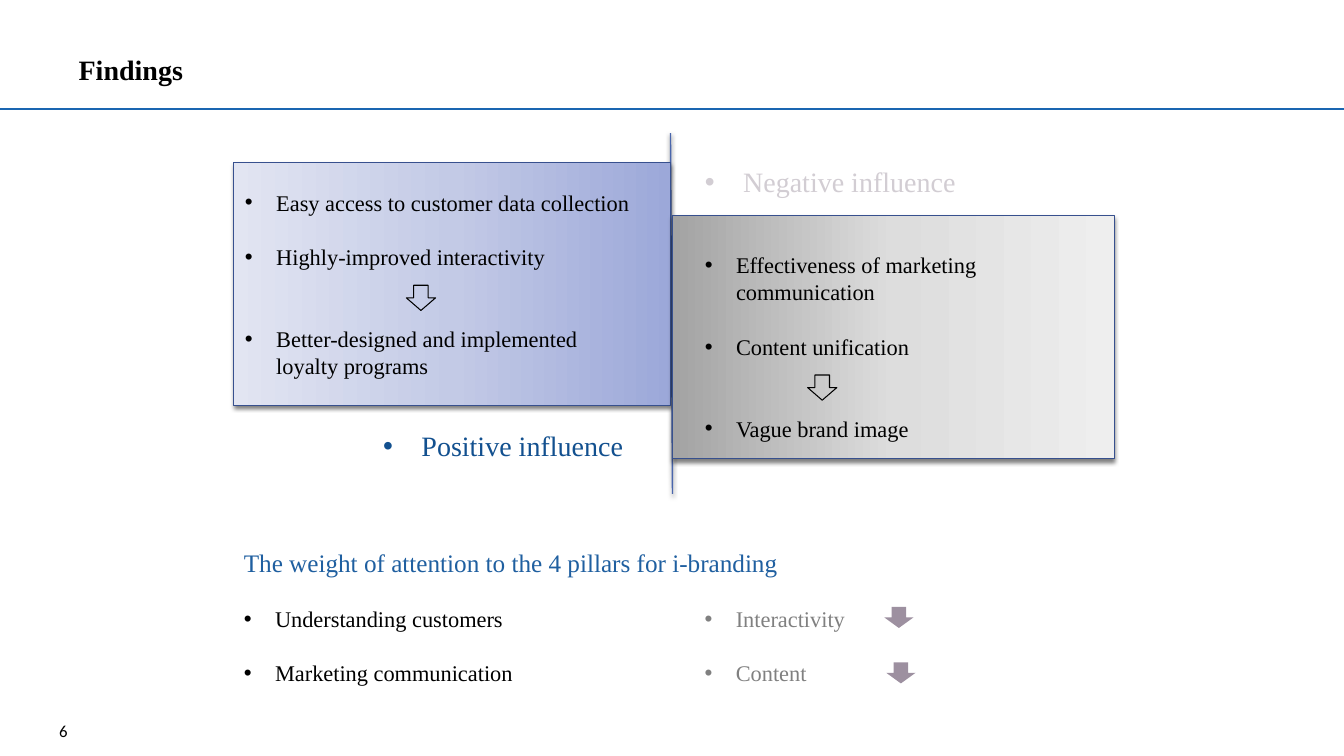
from lxml.etree import SubElement
from pptx import Presentation
from pptx.dml.color import RGBColor
from pptx.enum.shapes import MSO_CONNECTOR as Connector, MSO_SHAPE as Preset
from pptx.enum.text import MSO_ANCHOR as Anchor, MSO_AUTO_SIZE as AutoSize, PP_ALIGN as Align
from pptx.oxml.ns import qn
from pptx.util import Emu, Pt

PX = 9144
LINE_RATIO = 1.215
COLORS = {
    "black": "000000",
    "rule": "1A66B1",
    "divider": "4A66AC",
    "panel_edge": "37508E",
    "positive": "12508F",
    "negative": "D2CDD3",
    "heading": "1F5FA0",
    "muted": "808080",
    "marker": "9D90A0",
}
POSITIVE_STOPS = ("9CA8D9", "C3CAE6", "E2E5F2")
NEGATIVE_STOPS = ("A3A3A3", "DDDDDD", "EEEEEE")


def px(value):
    return Emu(value * PX)


def rgb(name):
    return RGBColor.from_string(COLORS[name])


class SlideBuilder:
    def __init__(self, slide, font="Times New Roman"):
        self.slide = slide
        self.shapes = slide.shapes
        self.font = font

    def place(self, shape, box):
        for name, value in zip(("left", "top", "width", "height"), box):
            setattr(shape, name, px(value))

    def style_frame(self, frame, anchor=Anchor.TOP):
        formats = {"word_wrap": True, "auto_size": AutoSize.NONE, "vertical_anchor": anchor}
        for name, value in formats.items():
            setattr(frame, name, value)

    def style_paragraph(self, paragraph, text, size, color, bold=False, font=None, **layout):
        paragraph.text = text
        for name, value in layout.items():
            setattr(paragraph, name, value)
        formats = {"name": font or self.font, "size": Pt(size), "bold": bold}
        for name, value in formats.items():
            setattr(paragraph.font, name, value)
        paragraph.font.color.rgb = rgb(color)

    def add_bullet(self, paragraph, indent):
        properties = paragraph._p.get_or_add_pPr()
        properties.set("marL", str(px(indent)))
        properties.set("indent", str(-px(indent)))
        SubElement(properties, qn("a:buFont"), typeface="Arial")
        SubElement(properties, qn("a:buChar"), char="•")

    def title(self, box, text):
        shape = self.shapes.title
        self.place(shape, box)
        self.style_frame(shape.text_frame, Anchor.MIDDLE)
        self.style_paragraph(shape.text_frame.paragraphs[0], text, 20, "black", True,
                             alignment=Align.LEFT, line_spacing=1.5)

    def label(self, box, text, size, color, **style):
        shape = self.shapes.add_textbox(*map(px, box))
        self.style_frame(shape.text_frame, Anchor.MIDDLE)
        self.style_paragraph(shape.text_frame.paragraphs[0], text, size, color, **style)

    def bullets(self, box, items, size=16, color="black", indent=31, holder=None):
        if holder is None:
            shape = self.shapes.add_textbox(*map(px, box))
        else:
            shape = self.slide.placeholders[holder]
            shape.element.getparent().append(shape.element)
            self.place(shape, box)
        frame = shape.text_frame
        self.style_frame(frame)
        line_height = Pt(size * LINE_RATIO)
        for index, (text, gap) in enumerate(items):
            paragraph = frame.add_paragraph() if index else frame.paragraphs[0]
            self.style_paragraph(paragraph, text, size, color, alignment=Align.LEFT,
                                 line_spacing=line_height, space_before=gap * line_height)
            self.add_bullet(paragraph, indent)

    def add_shadow(self, effects):
        shadow = SubElement(effects, qn("a:outerShdw"), blurRad=str(Pt(3)), dist=str(Pt(2)),
                            dir="5400000", algn="ctr", rotWithShape="0")
        color = SubElement(shadow, qn("a:srgbClr"), val=COLORS["black"])
        SubElement(color, qn("a:alpha"), val="50000")

    def line(self, start, end, color, shadow=False):
        connector = self.shapes.add_connector(Connector.STRAIGHT, *map(px, start + end))
        connector.line.color.rgb = rgb(color)
        connector.line.width = Pt(1)
        effects = SubElement(connector.element.spPr, qn("a:effectLst"))
        if shadow:
            self.add_shadow(effects)

    def shape(self, preset, box, fill=None, edge=None):
        shape = self.shapes.add_shape(preset, *map(px, box))
        shape.shadow.inherit = False
        if fill:
            shape.fill.solid()
            shape.fill.fore_color.rgb = rgb(fill)
        else:
            shape.fill.background()
        if edge:
            shape.line.color.rgb = rgb(edge)
            shape.line.width = Pt(0.75)
        else:
            shape.line.fill.background()
        return shape

    def panel(self, box, stops, angle):
        panel = self.shape(Preset.RECTANGLE, box, edge="panel_edge")
        panel.fill.gradient()
        panel.fill.gradient_angle = angle
        properties = panel.element.spPr
        stop_list = properties.find(".//" + qn("a:gsLst"))
        for stop in list(stop_list):
            stop_list.remove(stop)
        for index, color in enumerate(stops):
            stop = SubElement(stop_list, qn("a:gs"), pos=str(index * 50000))
            SubElement(stop, qn("a:srgbClr"), val=color)
        self.add_shadow(properties.find(qn("a:effectLst")))


def main():
    presentation = Presentation()
    presentation.slide_width = px(1333)
    presentation.slide_height = px(750)
    builder = SlideBuilder(presentation.slides.add_slide(presentation.slide_layouts[4]))

    builder.line((0, 108), (1333, 108), "rule")
    builder.label((0, 709, 77, 31), "6", 12, "black", font="Calibri", alignment=Align.RIGHT)
    builder.title((68, 13, 987, 94), "Findings")

    builder.line((665, 132), (667, 490), "divider", shadow=True)
    builder.panel((232, 161, 433, 241), POSITIVE_STOPS, 180)
    builder.panel((667, 214, 438, 241), NEGATIVE_STOPS, 0)

    builder.bullets((370, 420, 320, 44), [("Positive influence", 0)], 20, "positive", 38, holder=1)
    builder.bullets((689, 158, 320, 44), [("Negative influence", 0)], 20, "negative", 38, holder=3)
    builder.bullets((233, 182, 415, 199), [
        ("Easy access to customer data collection", 0),
        ("Highly-improved interactivity", 1),
        ("Better-designed and implemented loyalty programs", 2),
    ], holder=2)
    builder.bullets((689, 244, 415, 199), [
        ("Effectiveness of marketing communication", 0),
        ("Content unification", 1),
        ("Vague brand image", 2),
    ], holder=4)

    builder.label((232, 538, 576, 40), "The weight of attention to the 4 pillars for i-branding",
                  18, "heading")
    builder.bullets((232, 595, 400, 91), [
        ("Understanding customers", 0),
        ("Marketing communication", 1),
    ])
    builder.bullets((689, 595, 180, 91), [("Interactivity", 0), ("Content", 1)], color="muted")

    for left, top in ((877, 602), (879, 657)):
        builder.shape(Preset.DOWN_ARROW, (left, top, 29, 21), fill="marker")
    for left, top in ((403, 283), (801, 372)):
        builder.shape(Preset.DOWN_ARROW, (left, top, 29, 25), edge="black")

    presentation.save("out.pptx")


if __name__ == "__main__":
    main()
